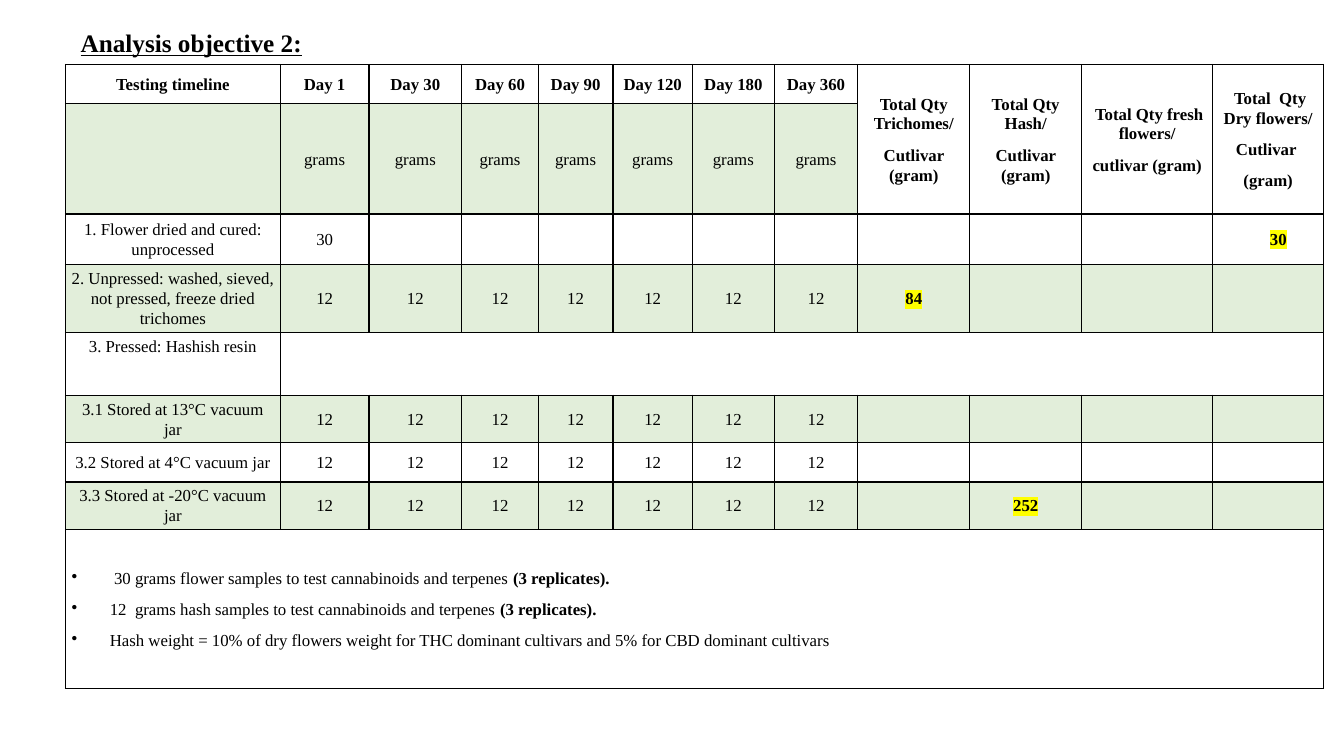
import pptx
import pptx.dml.color
import pptx.enum.text
import pptx.oxml
import pptx.oxml.ns
import pptx.util
from lxml import etree

Inches = pptx.util.Inches
Pt = pptx.util.Pt
ANCHOR = pptx.enum.text.MSO_ANCHOR
ALIGN = pptx.enum.text.PP_ALIGN
qn = pptx.oxml.ns.qn

BLACK = pptx.dml.color.RGBColor(0x00, 0x00, 0x00)
GREEN = pptx.dml.color.RGBColor(0x70, 0xAD, 0x47)
YELLOW = pptx.dml.color.RGBColor(0xFF, 0xFF, 0x00)
FONT = "Times New Roman"

COLUMNS = [2.13, 0.88, 0.92, 0.76, 0.74, 0.79, 0.81, 0.83, 1.11, 1.11, 1.3, 1.1]
ROWS = [0.39, 0.94, 0.5, 0.68, 0.62, 0.47, 0.39, 0.47, 1.58]
LAST_COLUMN = len(COLUMNS) - 1
NOTE_ROW = len(ROWS) - 1
PRESSED_ROW = 4
GREEN_ROWS = (1, 3, 5, 7)
DAYS = [1, 30, 60, 90, 120, 180, 360]
TOTALS = [
    ["Total Qty Trichomes/", "Cutlivar (gram)"],
    ["Total Qty Hash/", "Cutlivar (gram)"],
    [" Total Qty fresh flowers/", "cutlivar (gram)"],
    [" Total  Qty Dry flowers/", "Cutlivar ", "(gram)"],
]
TWELVES = ["12"] * len(DAYS)
BODY = [
    [""] + ["grams"] * len(DAYS),
    ["1. Flower dried and cured: unprocessed", "30"],
    ["2. Unpressed: washed, sieved, not pressed, freeze dried trichomes"] + TWELVES,
    ["3. Pressed: Hashish resin"],
    ["3.1 Stored at 13°C vacuum jar"] + TWELVES,
    ["3.2 Stored at 4°C vacuum jar"] + TWELVES,
    ["3.3 Stored at -20°C vacuum jar"] + TWELVES,
]
SUMS = {(2, 11): "30", (3, 8): "84", (7, 9): "252"}
NOTES = [
    (" 30 grams flower samples to test cannabinoids and terpenes ", "(3 replicates)."),
    ("12  grams hash samples to test cannabinoids and terpenes ", "(3 replicates)."),
    ("Hash weight = 10% of dry flowers weight for THC dominant cultivars"
     " and 5% for CBD dominant cultivars",),
]


def format_run(run, size=12, bold=False):
    """Give a run the slide's font, size and weight."""
    run.font.name = FONT
    run.font.size = Pt(size)
    run.font.bold = bold
    run.font.color.rgb = BLACK


def space_paragraph(paragraph, alignment):
    """Set the alignment and the common line and paragraph spacing."""
    paragraph.alignment = alignment
    paragraph.line_spacing = 1.07
    paragraph.space_after = Pt(8)


def write_cell(cell, lines, bold=False):
    """Write centred paragraphs into a cell."""
    cell.text_frame.text = "\n".join(lines)
    for paragraph in cell.text_frame.paragraphs:
        space_paragraph(paragraph, ALIGN.CENTER)
        for run in paragraph.runs:
            format_run(run, bold=bold)


def write_sum(cell, text):
    """Write a bold total on a yellow highlight."""
    write_cell(cell, [text], bold=True)
    properties = cell.text_frame.paragraphs[0].runs[0].font._element
    highlight = etree.Element(qn("a:highlight"))
    etree.SubElement(highlight, qn("a:srgbClr"), val=str(YELLOW))
    properties.find(qn("a:solidFill")).addnext(highlight)


def write_notes(cell):
    """Write the bulleted notes with their bold endings."""
    frame = cell.text_frame
    for index, parts in enumerate(NOTES):
        paragraph = frame.add_paragraph() if index else frame.paragraphs[0]
        space_paragraph(paragraph, ALIGN.LEFT)
        properties = paragraph._p.get_or_add_pPr()
        properties.set("marL", str(Inches(0.38)))
        properties.set("indent", str(-Inches(0.38)))
        etree.SubElement(properties, qn("a:buChar"), char="•")
        for position, text in enumerate(parts):
            run = paragraph.add_run()
            run.text = text
            format_run(run, bold=position == 1)


def draw_borders(cell):
    """Draw a thin black line on each side of a cell."""
    properties = cell._tc.get_or_add_tcPr()
    for index, side in enumerate(("a:lnL", "a:lnR", "a:lnT", "a:lnB")):
        line = etree.Element(qn(side), w=str(Pt(1)))
        fill = etree.SubElement(line, qn("a:solidFill"))
        etree.SubElement(fill, qn("a:srgbClr"), val=str(BLACK))
        properties.insert(index, line)


def shade_cell(cell, green):
    """Fill a cell with pale transparent green, or leave it clear."""
    if not green:
        cell.fill.background()
        return
    cell.fill.solid()
    cell.fill.fore_color.rgb = GREEN
    color = cell._tc.tcPr.find(qn("a:solidFill")).find(qn("a:srgbClr"))
    etree.SubElement(color, qn("a:alpha"), val="20000")


def style_cell(cell, green, side_margin, edge_margin):
    """Set the margins, anchor, fill and borders of a cell."""
    cell.margin_left = cell.margin_right = Inches(side_margin)
    cell.margin_top = cell.margin_bottom = Inches(edge_margin)
    cell.vertical_anchor = ANCHOR.MIDDLE
    shade_cell(cell, green)
    draw_borders(cell)


def add_timeline_table(slide):
    """Add the sampling table with its merged cells."""
    table = slide.shapes.add_table(
        len(ROWS), len(COLUMNS), Inches(0.65), Inches(0.64),
        Inches(sum(COLUMNS)), Inches(sum(ROWS))).table
    table.first_row = table.horz_banding = False
    for column, width in zip(table.columns, COLUMNS):
        column.width = Inches(width)
    for row, height in zip(table.rows, ROWS):
        row.height = Inches(height)

    first_total = len(DAYS) + 1
    for column in range(first_total, len(COLUMNS)):
        table.cell(0, column).merge(table.cell(1, column))
    table.cell(PRESSED_ROW, 1).merge(table.cell(PRESSED_ROW, LAST_COLUMN))
    table.cell(NOTE_ROW, 0).merge(table.cell(NOTE_ROW, LAST_COLUMN))

    for row in range(len(ROWS)):
        for column in range(len(COLUMNS)):
            cell = table.cell(row, column)
            is_total = row < 2 and column >= first_total
            margins = (0.08, 0.04) if is_total else (0.06, 0.03)
            style_cell(cell, row in GREEN_ROWS and not is_total, *margins)

    header = [["Testing timeline"]] + [[f"Day {day}"] for day in DAYS] + TOTALS
    for column, lines in enumerate(header):
        write_cell(table.cell(0, column), lines, bold=True)
    for row, texts in enumerate(BODY, start=1):
        for column, text in enumerate(texts):
            write_cell(table.cell(row, column), [text])
    for (row, column), text in SUMS.items():
        write_sum(table.cell(row, column), text)
    table.cell(2, LAST_COLUMN).margin_left = Inches(0.26)
    table.cell(PRESSED_ROW, 0).vertical_anchor = ANCHOR.TOP
    write_notes(table.cell(NOTE_ROW, 0))


def add_title(slide, text):
    """Place and format the underlined title."""
    title = slide.shapes.title
    title.left, title.top = Inches(0.7), Inches(0.2)
    title.width, title.height = Inches(6.67), Inches(0.41)
    frame = title.text_frame
    frame.text = text
    frame.word_wrap = True
    frame.auto_size = pptx.enum.text.MSO_AUTO_SIZE.NONE
    frame.vertical_anchor = ANCHOR.TOP
    space_paragraph(frame.paragraphs[0], ALIGN.LEFT)
    run = frame.paragraphs[0].runs[0]
    format_run(run, size=18, bold=True)
    run.font.underline = True


def main():
    """Build the slide and save it."""
    presentation = pptx.Presentation()
    presentation.slide_width = Inches(13.33)
    presentation.slide_height = Inches(7.5)
    slide = presentation.slides.add_slide(presentation.slide_layouts[5])
    add_title(slide, "Analysis objective 2:")
    add_timeline_table(slide)
    presentation.save("out.pptx")


if __name__ == "__main__":
    main()
